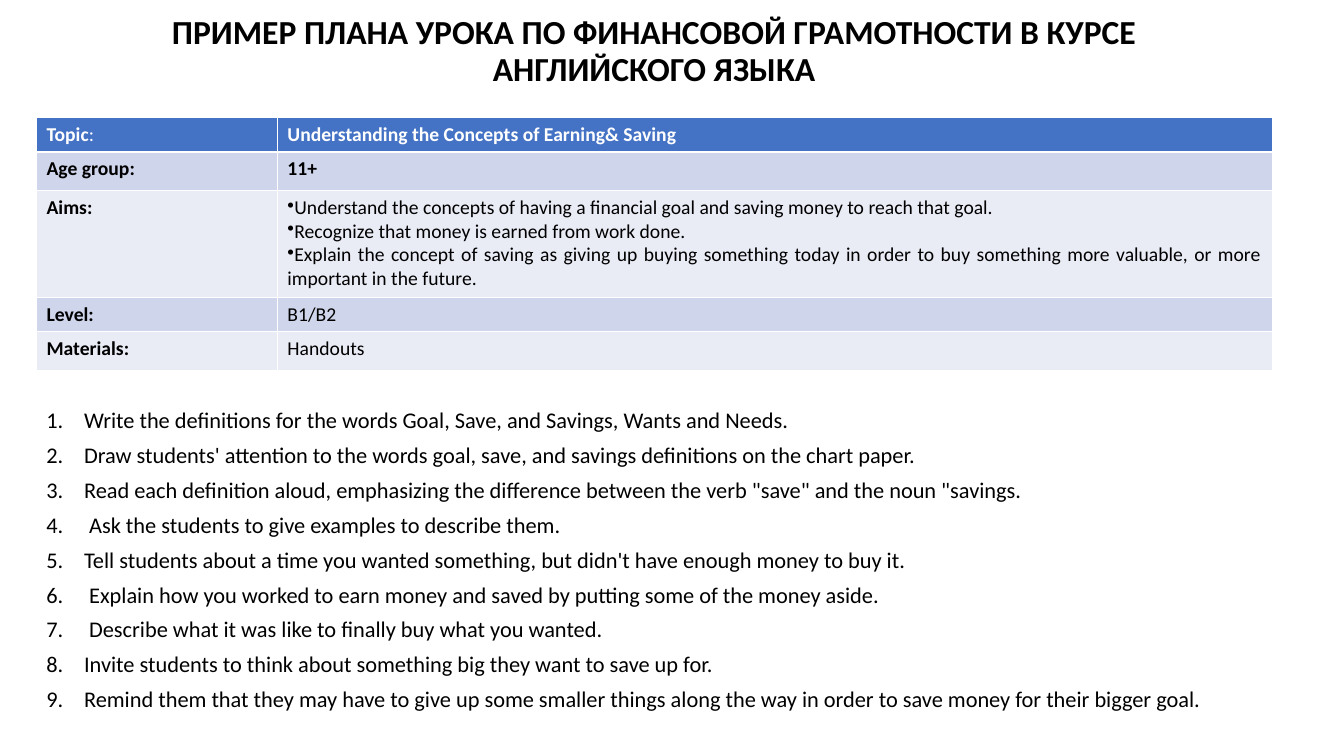
from lxml import etree
from pptx import Presentation
from pptx.dml.color import RGBColor
from pptx.enum.text import MSO_ANCHOR, MSO_AUTO_SIZE, PP_ALIGN
from pptx.oxml.ns import qn
from pptx.util import Cm, Pt

BLACK = RGBColor(0x00, 0x00, 0x00)
WHITE = RGBColor(0xFF, 0xFF, 0xFF)
BLUE = RGBColor(0x44, 0x72, 0xC4)
BAND_DARK = RGBColor(0xCF, 0xD5, 0xEA)
BAND_LIGHT = RGBColor(0xE9, 0xEB, 0xF5)
MIDDLE, BOTTOM = MSO_ANCHOR.MIDDLE, MSO_ANCHOR.BOTTOM
LEFT, CENTER, JUSTIFY = PP_ALIGN.LEFT, PP_ALIGN.CENTER, PP_ALIGN.JUSTIFY
NO_AUTOFIT = MSO_AUTO_SIZE.NONE
TITLE_ONLY = 5

TITLE = "ПРИМЕР ПЛАНА УРОКА ПО ФИНАНСОВОЙ ГРАМОТНОСТИ В КУРСЕ АНГЛИЙСКОГО ЯЗЫКА"
AIMS = [
    "Understand the concepts of having a financial goal and saving money to reach that goal.",
    "Recognize that money is earned from work done.",
    "Explain the concept of saving as giving up buying something today in order to buy "
    "something more valuable, or more important in the future.",
]
PLAN = [
    ("Topic", ["Understanding the Concepts of Earning& Saving"], True, 0.86),
    ("Age group:", ["11+"], True, 0.97),
    ("Aims:", AIMS, False, 2.7),
    ("Level:", ["B1/B2"], False, 0.86),
    ("Materials:", ["Handouts"], False, 0.98),
]
STEPS = [
    "Write the definitions for the words Goal, Save, and Savings, Wants and Needs.",
    "Draw students' attention to the words goal, save, and savings definitions on the chart paper.",
    "Read each definition aloud, emphasizing the difference between the verb \"save\" and the noun \"savings.",
    " Ask the students to give examples to describe them.",
    "Tell students about a time you wanted something, but didn't have enough money to buy it.",
    " Explain how you worked to earn money and saved by putting some of the money aside.",
    " Describe what it was like to finally buy what you wanted.",
    "Invite students to think about something big they want to save up for.",
    "Remind them that they may have to give up some smaller things along the way in order "
    "to save money for their bigger goal.",
]


def set_attributes(target, values):
    for name, value in values.items():
        setattr(target, name, value)


def add_text(paragraph, text, size, color=BLACK, bold=False):
    run = paragraph.add_run()
    run.text = text
    set_attributes(run.font, {"name": "Calibri", "size": Pt(size), "bold": bold})
    run.font.color.rgb = color


def add_bullet(paragraph, tag, attributes, indent=0):
    properties = paragraph._p.get_or_add_pPr()
    properties.set("marL", str(indent))
    properties.set("indent", str(-indent))
    etree.SubElement(properties, qn(tag), attributes)


def build_title(slide, left, top, width, height):
    title = slide.shapes.title
    set_attributes(title, {"left": left, "top": top, "width": width, "height": height})
    frame = title.text_frame
    set_attributes(frame, {"vertical_anchor": MIDDLE, "auto_size": NO_AUTOFIT, "word_wrap": True})
    paragraph = frame.paragraphs[0]
    set_attributes(paragraph, {"alignment": CENTER, "line_spacing": 0.9})
    add_text(paragraph, TITLE, 24, bold=True)


def build_plan(slide, left, top, width, height):
    table = slide.shapes.add_table(len(PLAN), 2, left, top, width, height).table
    label_width = Cm(6.07)
    table.columns[0].width = label_width
    table.columns[1].width = width - label_width
    for index, (label, lines, bold, row_height) in enumerate(PLAN):
        header = index == 0
        color = WHITE if header else BLACK
        fill = BLUE if header else (BAND_LIGHT, BAND_DARK)[index % 2]
        table.rows[index].height = Cm(row_height)
        label_cell, content_cell = table.rows[index].cells
        for cell in (label_cell, content_cell):
            cell.fill.solid()
            cell.fill.fore_color.rgb = fill
        label_paragraph = label_cell.text_frame.paragraphs[0]
        add_text(label_paragraph, label, 14, color, True)
        if header:
            add_text(label_paragraph, ":", 14, color)
        frame = content_cell.text_frame
        listed = len(lines) > 1
        for position, line in enumerate(lines):
            paragraph = frame.add_paragraph() if position else frame.paragraphs[0]
            paragraph.alignment = JUSTIFY if listed else LEFT
            if listed:
                add_bullet(paragraph, "a:buChar", {"char": "•"})
            add_text(paragraph, line, 14, color, bold)


def build_steps(slide, left, top, width, height):
    frame = slide.shapes.add_textbox(left, top, width, height).text_frame
    set_attributes(frame, {"word_wrap": True, "auto_size": NO_AUTOFIT,
                           "vertical_anchor": BOTTOM, "margin_bottom": Cm(0.23)})
    for position, step in enumerate(STEPS):
        paragraph = frame.add_paragraph() if position else frame.paragraphs[0]
        set_attributes(paragraph, {"alignment": JUSTIFY, "line_spacing": 1.3})
        add_bullet(paragraph, "a:buAutoNum", {"type": "arabicPeriod"}, Cm(0.95))
        add_text(paragraph, step, 16)


def main():
    presentation = Presentation()
    set_attributes(presentation, {"slide_width": Cm(33.87), "slide_height": Cm(19.05)})
    slide = presentation.slides.add_slide(presentation.slide_layouts[TITLE_ONLY])
    build_title(slide, Cm(1.88), Cm(0), Cm(29.21), Cm(2.62))
    build_steps(slide, Cm(0.92), Cm(9.32), Cm(31.14), Cm(8.86))
    build_plan(slide, Cm(0.92), Cm(2.97), Cm(31.14), Cm(6.37))
    presentation.save("out.pptx")


if __name__ == "__main__":
    main()
